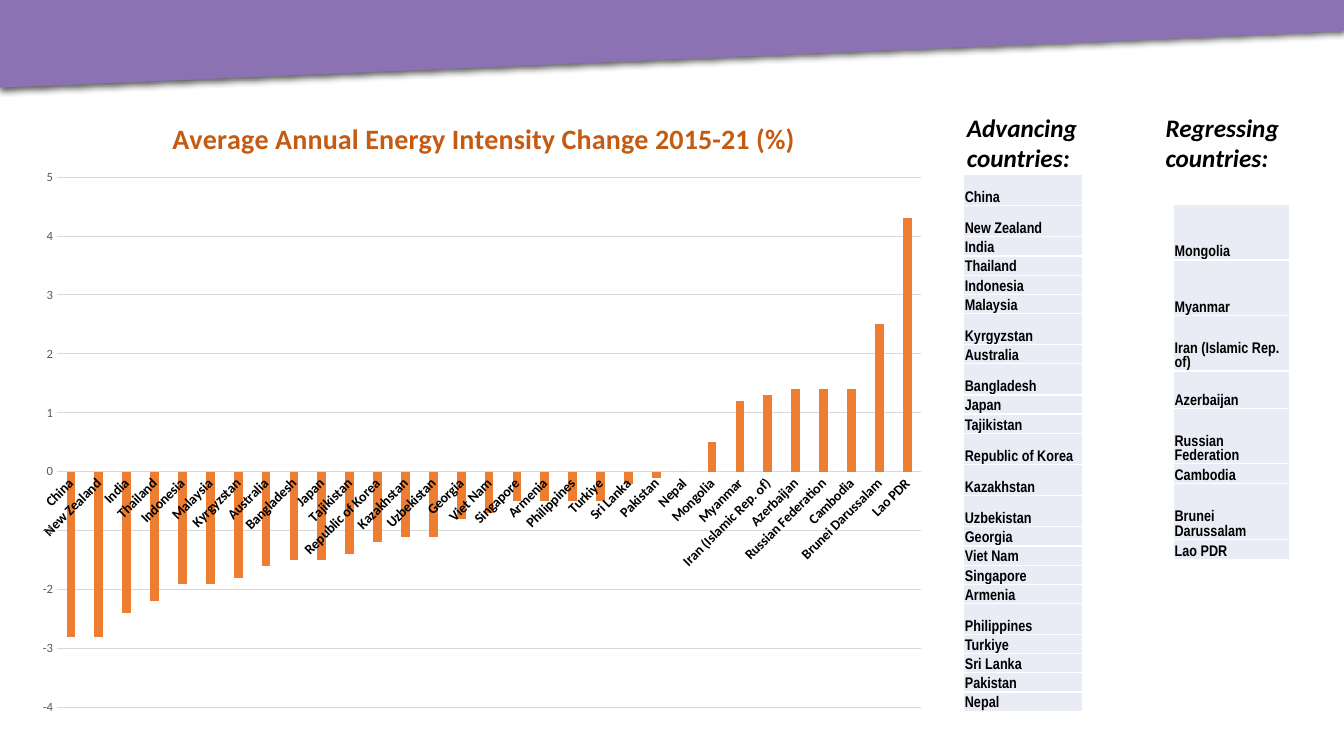
from dataclasses import dataclass

from pptx import Presentation
from pptx.chart.data import CategoryChartData
from pptx.dml.color import RGBColor
from pptx.enum.chart import XL_CHART_TYPE as ChartType, XL_TICK_MARK as Tick
from pptx.enum.text import MSO_ANCHOR as Anchor, MSO_AUTO_SIZE as AutoSize
from pptx.oxml import parse_xml
from pptx.oxml.ns import nsdecls, qn
from pptx.util import Emu, Pt

PX = 9144
PURPLE, ORANGE, RUST = "8B73B3", "ED7D31", "C55A11"
BLACK, GREY, RULE, CELL, WHITE = "000000", "595959", "D9D9D9", "E9EBF5", "FFFFFF"

TITLE = dict(size=Pt(20), bold=True, name="Calibri", color=RUST)
CHART = dict(size=Pt(10), name="Calibri", color=BLACK)
CATEGORY = dict(size=Pt(10), bold=True, name="Calibri", color=BLACK)
VALUE = dict(size=Pt(9), bold=False, name="Calibri", color=GREY)
HEADING = dict(size=Pt(18), bold=True, italic=True, name="Calibri", color=BLACK)
COUNTRY = dict(size=Pt(11), bold=True, name="Arial Narrow", color=BLACK)

CHANGES = {
    "China": -2.8, "New Zealand": -2.8, "India": -2.4, "Thailand": -2.2,
    "Indonesia": -1.9, "Malaysia": -1.9, "Kyrgyzstan": -1.8, "Australia": -1.6,
    "Bangladesh": -1.5, "Japan": -1.5, "Tajikistan": -1.4,
    "Republic of Korea": -1.2, "Kazakhstan": -1.1, "Uzbekistan": -1.1,
    "Georgia": -0.8, "Viet Nam": -0.7, "Singapore": -0.5, "Armenia": -0.5,
    "Philippines": -0.5, "Turkiye": -0.5, "Sri Lanka": -0.2, "Pakistan": -0.1,
    "Nepal": 0, "Mongolia": 0.5, "Myanmar": 1.2, "Iran (Islamic Rep. of)": 1.3,
    "Azerbaijan": 1.4, "Russian Federation": 1.4, "Cambodia": 1.4,
    "Brunei Darussalam": 2.5, "Lao PDR": 4.3,
}


@dataclass
class CountryList:
    """A heading and the one-column table of countries under it."""
    holder: int
    heading: str
    heading_x: int
    x: int
    y: int
    width: int
    countries: list[str]
    row: int
    special: dict[str, int]


TALL = ("China", "New Zealand", "Kyrgyzstan", "Bangladesh", "Republic of Korea",
        "Kazakhstan", "Uzbekistan", "Philippines")
LISTS = [
    CountryList(1, "Advancing countries:", 949, 956, 173, 118,
                [c for c, v in CHANGES.items() if v <= 0], 19,
                dict.fromkeys(TALL, 31)),
    CountryList(3, "Regressing countries:", 1146, 1164, 203, 115,
                [c for c, v in CHANGES.items() if v > 0], 55,
                {"Azerbaijan": 37, "Cambodia": 20, "Lao PDR": 20}),
]


def px(n: int) -> Emu:
    """Turn px into EMU."""
    return Emu(n * PX)


def paint(fmt, color: str) -> None:
    """Give a fill a solid colour."""
    fmt.solid()
    fmt.fore_color.rgb = RGBColor.from_string(color)


def style(font, fmt: dict) -> None:
    """Set font attributes from a format."""
    for key, value in fmt.items():
        if key == "color":
            paint(font.fill, value)
        else:
            setattr(font, key, value)


def write(tf, text: str, fmt: dict) -> None:
    """Write one formatted run into a text frame."""
    r = tf.paragraphs[0].add_run()
    r.text = text
    style(r.font, fmt)


def rule_line(line) -> None:
    """Draw a thin grey chart line."""
    paint(line.fill, RULE)
    line.width = Pt(0.75)


def place(parent, index: int, target: str = "", **box: float) -> None:
    """Give a chart part a fixed place as fractions of the chart."""
    for old in parent.findall(qn("c:layout")):
        parent.remove(old)
    inner = f'<c:layoutTarget val="{target}"/>' if target else ""
    modes = "".join(f'<c:{k}Mode val="edge"/>' for k in "xy")
    sizes = "".join(f'<c:{k} val="{v}"/>' for k, v in box.items())
    parent.insert(index, parse_xml(
        f'<c:layout {nsdecls("c")}><c:manualLayout>{inner}{modes}{sizes}'
        '</c:manualLayout></c:layout>'))


def add_banner(s) -> None:
    """Draw the slanted band across the top."""
    builder = s.shapes.build_freeform(0, 0, scale=PX)
    builder.add_line_segments([(1333, 0), (1333, 31), (0, 87)], close=True)
    sp = builder.convert_to_shape()
    paint(sp.fill, PURPLE)
    sp.line.fill.background()
    sp._element.spPr.append(parse_xml(
        f'<a:effectLst {nsdecls("a")}><a:outerShdw blurRad="{Pt(4.5)}" '
        f'dist="{Pt(1.5)}" dir="5400000" algn="t" rotWithShape="0">'
        f'<a:srgbClr val="{BLACK}"><a:alpha val="63000"/></a:srgbClr>'
        '</a:outerShdw></a:effectLst>'))


def add_chart(s) -> None:
    """Draw the column chart of energy intensity changes."""
    data = CategoryChartData()
    data.categories = list(CHANGES)
    data.add_series("Series 1", list(CHANGES.values()))
    chart = s.shapes.add_chart(ChartType.COLUMN_CLUSTERED, px(20), px(87),
                               px(912), px(634), data).chart
    style(chart.font, CHART)
    chart.has_legend = False
    chart.has_title = True
    write(chart.chart_title.text_frame,
          "Average Annual Energy Intensity Change 2015-21 (%)", TITLE)
    place(chart.chart_title._element, 1, x=0.16, y=0.04)
    place(chart._chartSpace.chart.plotArea, 0, "inner",
          x=0.04, y=0.14, w=0.94, h=0.83)

    plot = chart.plots[0]
    plot.gap_width, plot.overlap, plot.vary_by_categories = 219, -27, False
    series = plot.series[0]
    series.invert_if_negative = False
    paint(series.format.fill, ORANGE)

    cat, val = chart.category_axis, chart.value_axis
    for axis, fmt in ((cat, CATEGORY), (val, VALUE)):
        axis.major_tick_mark = axis.minor_tick_mark = Tick.NONE
        style(axis.tick_labels.font, fmt)
    cat._element.find(".//" + qn("a:bodyPr")).set("rot", "-2700000")
    rule_line(cat.format.line)
    val.minimum_scale, val.maximum_scale, val.major_unit = -4, 5, 1
    val.format.line.fill.background()
    rule_line(val.major_gridlines.format.line)


def add_border(cell) -> None:
    """Put a white line on every side of a cell."""
    tc_pr = cell._tc.get_or_add_tcPr()
    for i, side in enumerate("LRTB"):
        tc_pr.insert(i, parse_xml(
            f'<a:ln{side} {nsdecls("a")} w="{Pt(1)}"><a:solidFill>'
            f'<a:srgbClr val="{WHITE}"/></a:solidFill></a:ln{side}>'))


def add_list(s, item: CountryList) -> None:
    """Draw a heading and its country table."""
    sp = s.placeholders[item.holder]
    sp.left, sp.top = px(item.heading_x), px(106)
    sp.width, sp.height = px(133), px(101)
    tf = sp.text_frame
    tf.auto_size, tf.vertical_anchor = AutoSize.NONE, Anchor.TOP
    tf.paragraphs[0].space_before = Pt(0)
    write(tf, item.heading, HEADING)

    heights = [item.special.get(c, item.row) for c in item.countries]
    table = s.shapes.add_table(len(heights), 1, px(item.x), px(item.y),
                               px(item.width), px(sum(heights))).table
    table.first_row = table.horz_banding = False
    for row, height, country in zip(table.rows, heights, item.countries):
        row.height = px(height)
        cell = row.cells[0]
        cell.margin_left = cell.margin_right = cell.margin_top = px(1)
        cell.margin_bottom = 0
        cell.vertical_anchor = Anchor.BOTTOM
        paint(cell.fill, CELL)
        add_border(cell)
        write(cell.text_frame, country, COUNTRY)


def main() -> None:
    """Build and save the slide."""
    prs = Presentation()
    prs.slide_width, prs.slide_height = px(1333), px(750)
    s = prs.slides.add_slide(prs.slide_layouts.get_by_name("Comparison"))
    add_banner(s)
    add_chart(s)
    for item in LISTS:
        add_list(s, item)
    for sp in list(s.placeholders):
        if not sp.text_frame.text:
            sp._element.getparent().remove(sp._element)
    prs.save("out.pptx")


if __name__ == "__main__":
    main()
